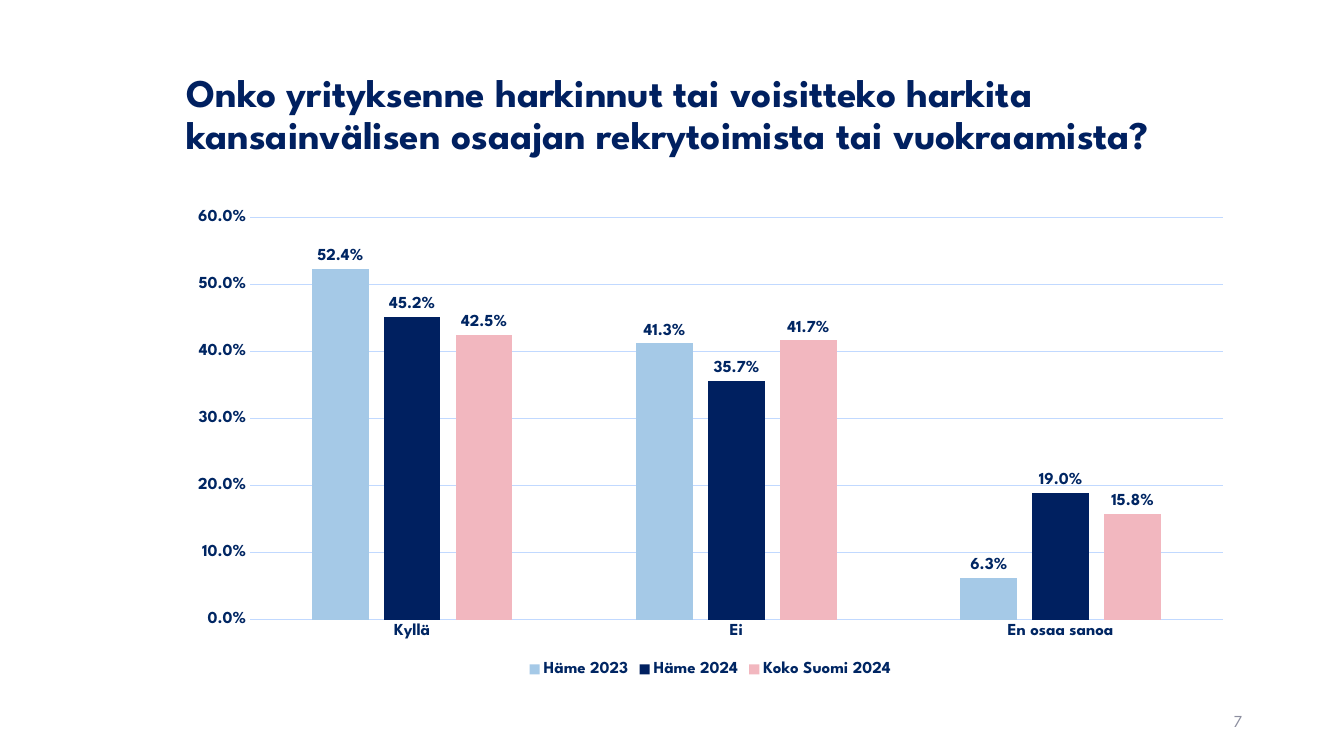
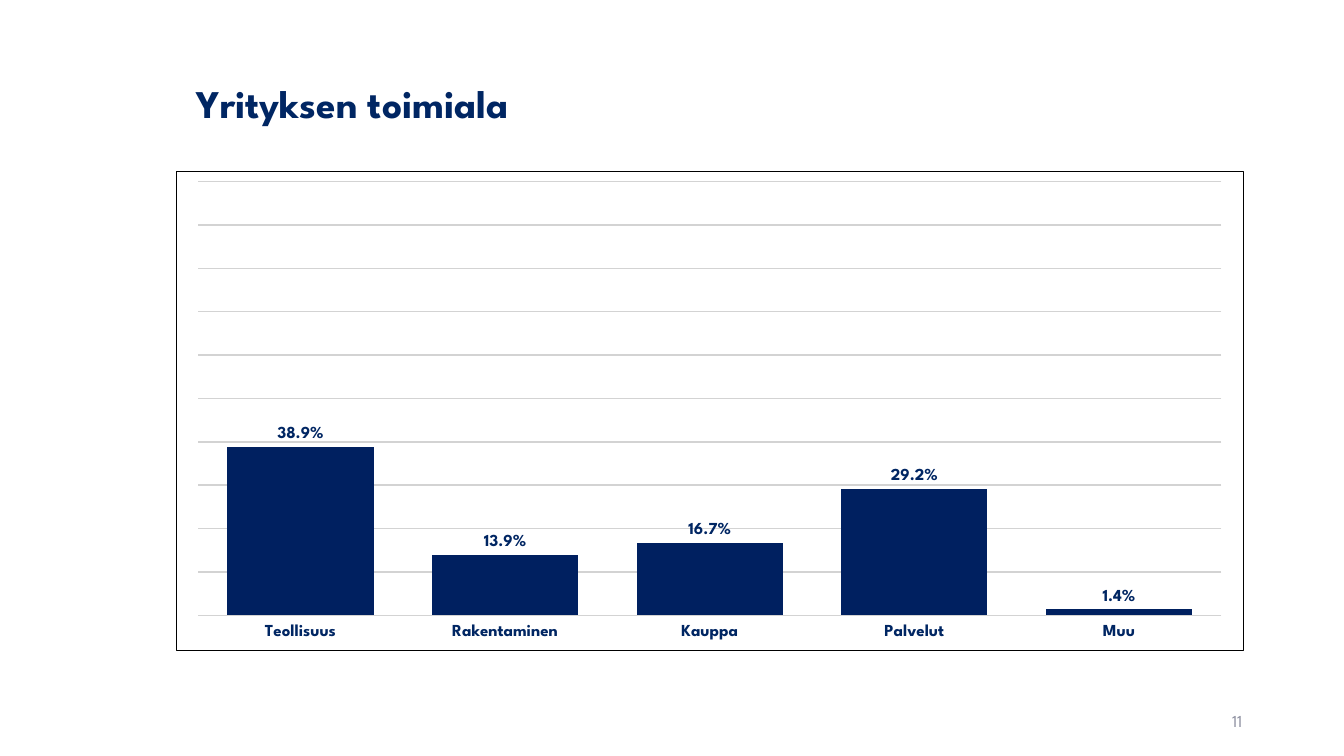
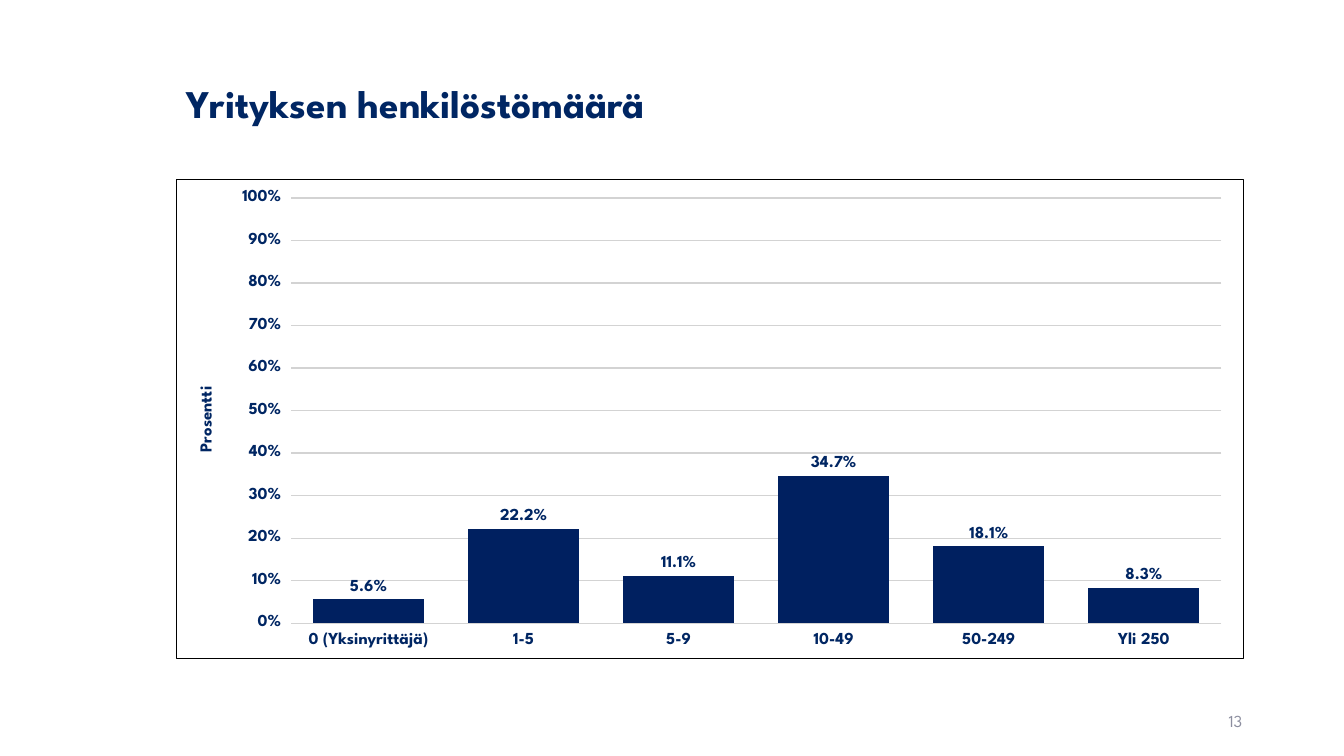
from lxml import etree
from pptx import Presentation
from pptx.chart import data as chartdata
from pptx.dml.color import RGBColor
from pptx.enum import chart as charts, text
from pptx.oxml import ns, parse_xml
from pptx.util import Inches, Pt

FONT = "League Spartan"
NAVY = RGBColor(0x00, 0x20, 0x60)
INK = RGBColor(0x00, 0x26, 0x63)
SKY = RGBColor(0xA5, 0xC9, 0xE7)
PINK = RGBColor(0xF2, 0xB7, 0xBF)
PALE_BLUE = RGBColor(0xC1, 0xD9, 0xFF)
SILVER = RGBColor(0xD3, 0xD3, 0xD3)
GREY = RGBColor(0x8C, 0x8E, 0x9F)
BLACK = RGBColor(0x00, 0x00, 0x00)
WHITE = RGBColor(0xFF, 0xFF, 0xFF)

LEFT, WIDTH = 1.75, 10.59
TITLE_HEIGHT, CHART_HEIGHT = 1.3, 4.76
NUMBER_BOX = (9.42, 6.95, 3, 0.4)

TITLE_FONT = {"name": FONT, "size": Pt(28), "bold": True}
CHART_FONT = {"name": FONT, "size": Pt(12), "bold": True}
NUMBER_FONT = {"name": FONT, "size": Pt(12)}
LABEL_FORMAT = {"number_format": "0.0%", "number_format_is_linked": False,
                "show_value": True, "position": charts.XL_LABEL_POSITION.OUTSIDE_END}
SCALE_FORMAT = {"minimum_scale": 0, "major_unit": 0.1, "has_major_gridlines": True}
LEGEND_FORMAT = {"position": charts.XL_LEGEND_POSITION.BOTTOM, "include_in_layout": False}


def apply(target, formats):
    """Set every attribute named in a dict of format values."""
    for name, value in formats.items():
        setattr(target, name, value)


def style_font(font, formats, color):
    """Apply a shared font style in one colour."""
    apply(font, formats)
    font.color.rgb = color


def style_line(line, color, width):
    """Give a line a colour and a width in points."""
    line.color.rgb = color
    line.width = Pt(width)


def place_title(page, wording, top, color, indent):
    """Place the page title in its placeholder."""
    box = page.shapes.title
    apply(box, {"left": Inches(LEFT), "top": Inches(top),
                "width": Inches(WIDTH), "height": Inches(TITLE_HEIGHT)})
    frame = box.text_frame
    frame.text = wording
    apply(frame, {"vertical_anchor": text.MSO_ANCHOR.MIDDLE, "word_wrap": True,
                  "auto_size": text.MSO_AUTO_SIZE.NONE, "margin_left": Inches(0.1 + indent)})
    para = frame.paragraphs[0]
    apply(para, {"alignment": text.PP_ALIGN.LEFT, "line_spacing": 0.9})
    style_font(para.runs[0].font, TITLE_FONT, color)


def place_number(page, number):
    """Place the page number at the lower right."""
    box = page.shapes.add_textbox(*map(Inches, NUMBER_BOX))
    frame = box.text_frame
    apply(frame, {"word_wrap": True, "vertical_anchor": text.MSO_ANCHOR.MIDDLE})
    para = frame.paragraphs[0]
    para.alignment = text.PP_ALIGN.RIGHT
    span = para.add_run()
    span.text = str(number)
    style_font(span.font, NUMBER_FONT, GREY)


def set_plot_box(chart, percents):
    """Fix the inner plot area as percentages of the chart."""
    area = chart.element.find(".//" + ns.qn("c:plotArea"))
    for old in area.findall(ns.qn("c:layout")):
        area.remove(old)
    layout = parse_xml(f"<c:layout {ns.nsdecls('c')}><c:manualLayout/></c:layout>")
    settings = {"layoutTarget": "inner", "xMode": "edge", "yMode": "edge"}
    settings.update((key, str(value / 100)) for key, value in zip("xywh", percents))
    for key, value in settings.items():
        etree.SubElement(layout[0], ns.qn("c:" + key)).set("val", value)
    area.insert(0, layout)


def frame_chart(chart):
    """Draw a thin black border round the chart and fill it white."""
    props = parse_xml(
        f'<c:spPr {ns.nsdecls("c", "a")}><a:solidFill><a:srgbClr val="{WHITE}"/></a:solidFill>'
        f'<a:ln w="{Pt(0.5)}"><a:solidFill><a:srgbClr val="{BLACK}"/></a:solidFill></a:ln></c:spPr>')
    chart.element.find(ns.qn("c:chart")).addnext(props)


def place_chart(page, top, cats, series, plot_box, gap, overlap, maximum, grid, tick):
    """Place a clustered column chart in the shared style."""
    source = chartdata.CategoryChartData(number_format="0.0%")
    source.categories = cats
    for name, values, _ in series:
        source.add_series(name, values)
    chart = page.shapes.add_chart(
        charts.XL_CHART_TYPE.COLUMN_CLUSTERED, Inches(LEFT), Inches(top),
        Inches(WIDTH), Inches(CHART_HEIGHT), source).chart
    apply(chart, {"has_title": False, "has_legend": len(series) > 1})
    style_font(chart.font, CHART_FONT, INK)
    plot = chart.plots[0]
    apply(plot, {"gap_width": gap, "overlap": overlap,
                 "vary_by_categories": False, "has_data_labels": True})
    apply(plot.data_labels, LABEL_FORMAT)
    style_font(plot.data_labels.font, CHART_FONT, INK)
    for column, (_, _, color) in zip(plot.series, series):
        column.format.fill.solid()
        column.format.fill.fore_color.rgb = color
    for axis in (chart.category_axis, chart.value_axis):
        axis.major_tick_mark = tick
        axis.format.line.fill.background()
        style_font(axis.tick_labels.font, CHART_FONT, INK)
    apply(chart.value_axis, SCALE_FORMAT)
    chart.value_axis.maximum_scale = maximum
    style_line(chart.value_axis.major_gridlines.format.line, *grid)
    set_plot_box(chart, plot_box)
    if chart.has_legend:
        apply(chart.legend, LEGEND_FORMAT)
        style_font(chart.legend.font, CHART_FONT, INK)
    return chart


def set_scale_labels(axis, number_format):
    """Set the number format of the value axis labels."""
    apply(axis.tick_labels, {"number_format": number_format, "number_format_is_linked": False})


def set_scale_title(axis, wording):
    """Write an upright title beside the value axis."""
    frame = axis.axis_title.text_frame
    frame.text = wording
    style_font(frame.paragraphs[0].runs[0].font, CHART_FONT, INK)
    body = axis.axis_title.element if hasattr(axis.axis_title, "element") else axis.axis_title._element
    body.find(".//" + ns.qn("a:bodyPr")).set("rot", "-5400000")


def add_page(deck, number, title, title_top, title_color=INK, indent=0):
    """Add a page with its title and number."""
    page = deck.slides.add_slide(deck.slide_layouts[5])
    place_title(page, title, title_top, title_color, indent)
    place_number(page, number)
    return page


def add_comparison(deck):
    """Add the page comparing three surveys."""
    page = add_page(deck, 7, "Onko yrityksenne harkinnut tai voisitteko harkita kansainvälisen "
                    "osaajan rekrytoimista tai vuokraamista?", 0.5, NAVY)
    series = [("Häme 2023", (0.524, 0.413, 0.063), SKY),
              ("Häme 2024", (0.452, 0.357, 0.19), NAVY),
              ("Koko Suomi 2024", (0.425, 0.417, 0.158), PINK)]
    chart = place_chart(page, 2, ("Kyllä", "Ei", "En osaa sanoa"), series, (6.9, 3.4, 91.1, 83.8),
                        219, -27, 0.6, (PALE_BLUE, 0.75), charts.XL_TICK_MARK.NONE)
    style_line(chart.category_axis.format.line, PALE_BLUE, 0.75)
    set_scale_labels(chart.value_axis, "0.0%")


def add_profile(deck, number, title, chart_top, shares, plot_box, indent=0):
    """Add a page with one framed series of shares."""
    page = add_page(deck, number, title, 0.4, indent=indent)
    series = [("Series 1", tuple(shares.values()), NAVY)]
    chart = place_chart(page, chart_top, tuple(shares), series, plot_box,
                        40, -2, 1, (SILVER, 1), charts.XL_TICK_MARK.OUTSIDE)
    frame_chart(chart)
    return chart


def main():
    """Build and save the deck."""
    deck = Presentation()
    apply(deck, {"slide_width": Inches(13.33), "slide_height": Inches(7.5)})
    add_comparison(deck)
    sectors = {"Teollisuus": 0.389, "Rakentaminen": 0.139, "Kauppa": 0.167,
               "Palvelut": 0.292, "Muu": 0.014}
    chart = add_profile(deck, 11, "Yrityksen toimiala", 1.7, sectors,
                        (2, 2.1, 95.9, 90.5), indent=0.1)
    chart.value_axis.visible = False
    staff = {"0 (Yksinyrittäjä)": 0.056, "1-5": 0.222, "5-9": 0.111,
             "10-49": 0.347, "50-249": 0.181, "Yli 250": 0.083}
    chart = add_profile(deck, 13, "Yrityksen henkilöstömäärä", 1.78, staff,
                        (10.7, 3.8, 87.2, 88.8))
    set_scale_labels(chart.value_axis, "0%")
    set_scale_title(chart.value_axis, "Prosentti")
    deck.save("out.pptx")


if __name__ == "__main__":
    main()
